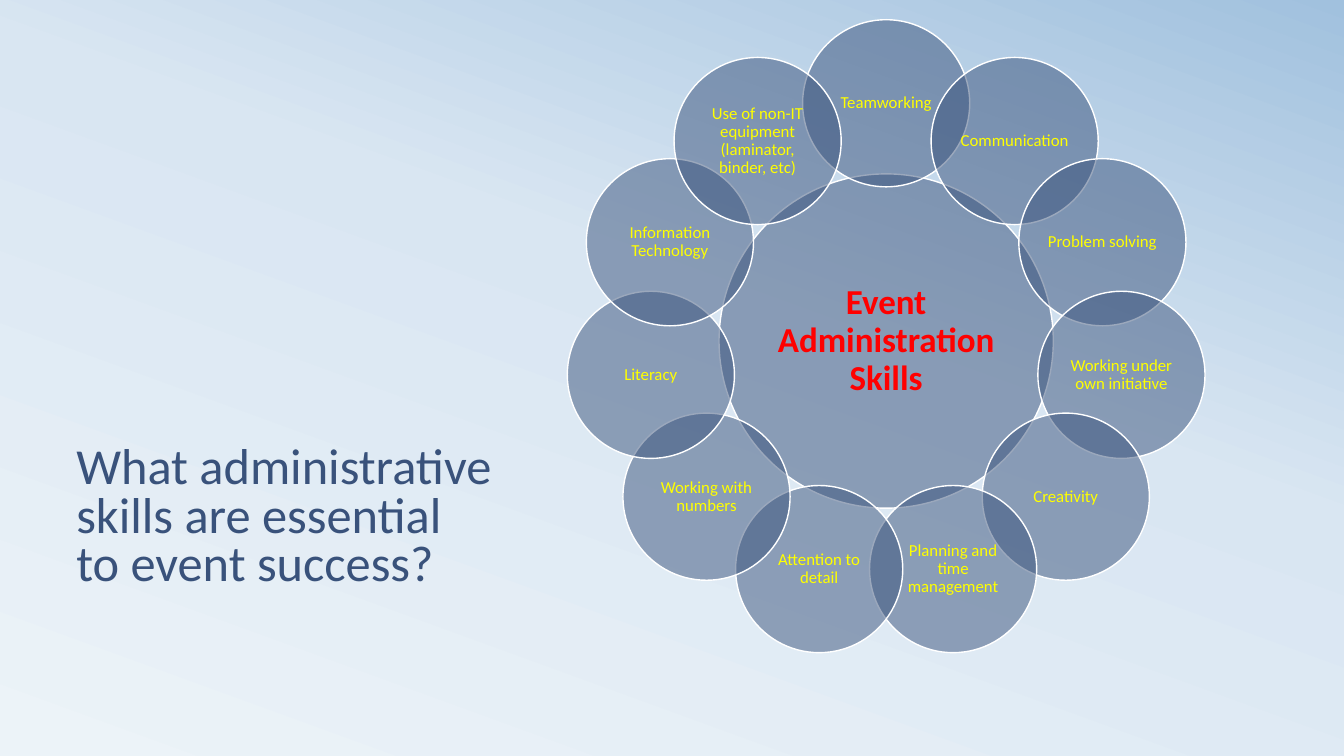
from copy import deepcopy
from dataclasses import dataclass
from math import cos, radians, sin

from lxml import etree
from pptx import Presentation
from pptx.dml.color import RGBColor
from pptx.enum.shapes import MSO_SHAPE
from pptx.enum.text import MSO_ANCHOR, PP_ALIGN
from pptx.oxml.ns import qn
from pptx.util import Inches, Pt

OVAL = MSO_SHAPE.OVAL
MIDDLE, BOTTOM = MSO_ANCHOR.MIDDLE, MSO_ANCHOR.BOTTOM
LEFT, CENTER = PP_ALIGN.LEFT, PP_ALIGN.CENTER


@dataclass(frozen=True)
class Theme:
    font: str = "Calibri"
    navy: str = "39527B"
    white: str = "FFFFFF"
    red: str = "FF0000"
    yellow: str = "FFFF00"
    gradient: tuple = ((0, "ECF3F8"), (0.58, "D9E6F2"), (1, "A1C1DE"))
    gradient_angle: int = 70
    circle_opacity: int = 50
    title_size: int = 36
    core_size: int = 25
    petal_size: int = 12


class Deck:
    """One slide on a grid of 16 columns by 9 rows of square cells."""

    def __init__(self, theme):
        self.theme = theme
        self.prs = Presentation()
        self.cell = Inches(7.5) / 9
        self.prs.slide_width = self.grid(16)
        self.prs.slide_height = self.grid(9)
        self.s = self.prs.slides.add_slide(self.prs.slide_layouts[6])

    def grid(self, cells):
        return round(cells * self.cell)

    def background(self):
        fill = self.s.background.fill
        fill.gradient()
        fill.gradient_angle = self.theme.gradient_angle
        stop_list = next(self.s.element.iter(qn("a:gsLst")))
        stop_list.insert(1, deepcopy(stop_list[0]))
        for stop, (position, color) in zip(fill.gradient_stops, self.theme.gradient):
            stop.position = position
            stop.color.rgb = RGBColor.from_string(color)

    def set_text(self, tf, lines, size, color, align, anchor, spacing, bold=False):
        tf.word_wrap = True
        tf.vertical_anchor = anchor
        p = tf.paragraphs[0]
        p.alignment = align
        p.line_spacing = spacing
        for i, line in enumerate(lines):
            if i:
                p.add_line_break()
            p.add_run().text = line
        p.font.name = self.theme.font
        p.font.size = Pt(size)
        p.font.bold = bold
        p.font.color.rgb = RGBColor.from_string(color)

    def title(self, lines, col, row, cols, rows):
        box = self.s.shapes.add_textbox(*map(self.grid, (col, row, cols, rows)))
        self.set_text(box.text_frame, lines, self.theme.title_size, self.theme.navy,
                      LEFT, BOTTOM, 0.8)

    def circle(self, text, col, row, diameter, size, color, inset, bold=False):
        """Draw a see-through circle centred at col, row."""
        corner = (col - diameter / 2, row - diameter / 2)
        sp = self.s.shapes.add_shape(OVAL, *map(self.grid, (*corner, diameter, diameter)))
        sp.shadow.inherit = False
        sp.fill.solid()
        sp.fill.fore_color.rgb = RGBColor.from_string(self.theme.navy)
        rgb = next(sp.element.spPr.iter(qn("a:srgbClr")))
        etree.SubElement(rgb, qn("a:alpha"), val=str(self.theme.circle_opacity * 1000))
        sp.line.color.rgb = RGBColor.from_string(self.theme.white)
        sp.line.width = Pt(1)
        tf = sp.text_frame
        tf.margin_left = tf.margin_right = tf.margin_top = tf.margin_bottom = Inches(inset)
        self.set_text(tf, [text], size, color, CENTER, MIDDLE, 0.9, bold)

    def flower(self, core, petals, col, row, diameter, ring):
        """Draw a core with half-size petals spaced evenly, clockwise from the top."""
        t = self.theme
        self.circle(core, col, row, diameter, t.core_size, t.red, 0.03, bold=True)
        for i, petal in enumerate(petals):
            angle = radians(360 * i / len(petals))
            self.circle(petal, col + ring * sin(angle), row - ring * cos(angle),
                        diameter / 2, t.petal_size, t.yellow, 0.02)


SKILLS = [
    "Teamworking",
    "Communication",
    "Problem solving",
    "Working under own initiative",
    "Creativity",
    "Planning and time management",
    "Attention to detail",
    "Working with numbers",
    "Literacy",
    "Information Technology",
    "Use of non-IT equipment (laminator, binder, etc)",
]


def main():
    deck = Deck(Theme())
    deck.background()
    # Question on the left
    deck.title(["What administrative skills are essential", "to event success?"],
               0.79, 0.9, 5.2, 6.2)
    # Ring of skills on the right
    deck.flower("Event Administration Skills", SKILLS,
                col=10.55, row=4.06, diameter=3.98, ring=2.83)
    deck.prs.save("out.pptx")


if __name__ == "__main__":
    main()
